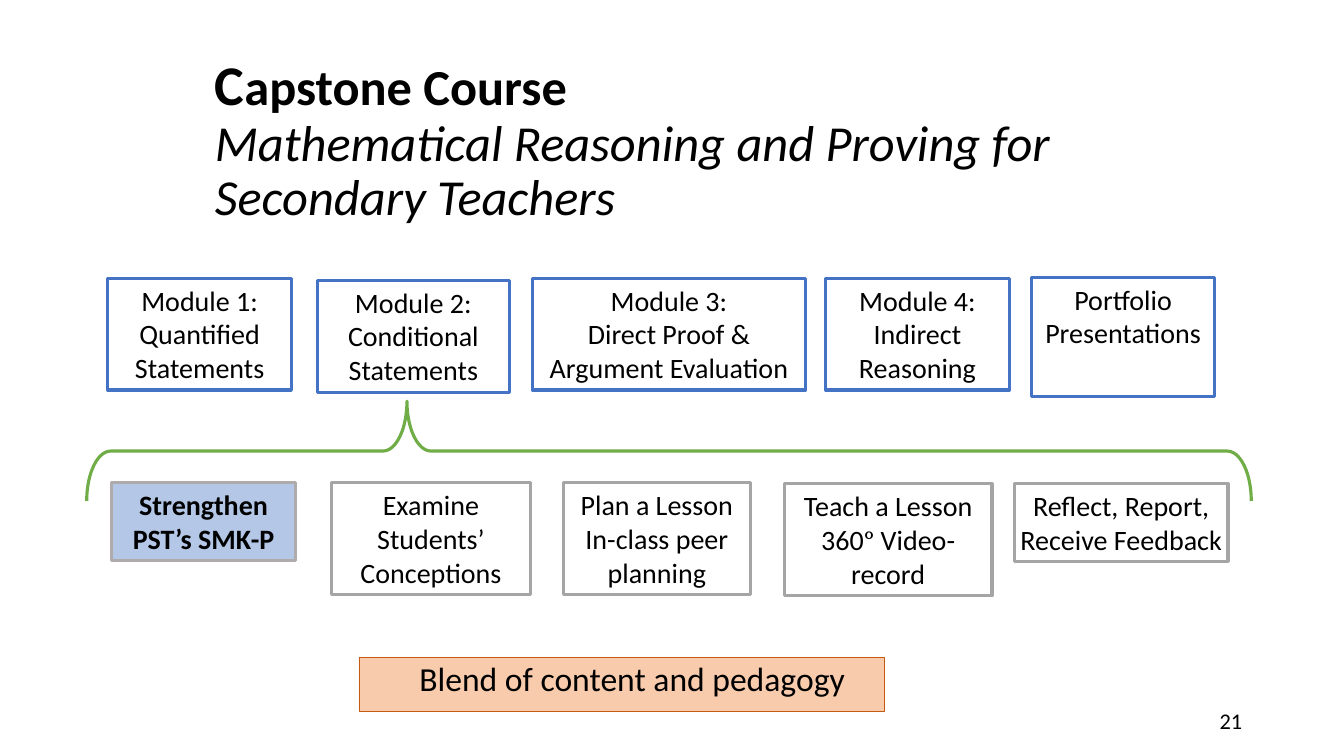
from dataclasses import dataclass

from pptx import Presentation
from pptx.dml.color import RGBColor
from pptx.enum.shapes import MSO_SHAPE as Shape
from pptx.enum.text import MSO_ANCHOR as Anchor, MSO_AUTO_SIZE as AutoSize, PP_ALIGN as Align
from pptx.util import Inches, Pt


@dataclass(frozen=True)
class Theme:
    ink: str = "000000"
    paper: str = "FFFFFF"
    module: str = "4472C4"
    activity: str = "A5A5A5"
    focus_fill: str = "B4C7E7"
    focus_line: str = "AFABAB"
    brace: str = "70AD47"
    banner_fill: str = "F8CBAD"
    banner_line: str = "C55A11"
    font: str = "Calibri"
    symbol_font: str = "Cambria"
    initial: int = 40
    title: int = 36
    banner: int = 24
    body: int = 20
    number: int = 16
    outline: float = 2.25
    hairline: float = 0.5


THEME = Theme()
WIDTH, HEIGHT = Inches(13.33), Inches(7.5)
INSET = Inches(0.1)

# Label, left, top, width, height in percent of the slide, side inset
MODULES = [
    ("Module 1: Quantified Statements", (8.03, 36.8, 13.65, 14.8), INSET),
    ("Module 2: Conditional Statements", (23.63, 37.07, 14.25, 14.8), INSET),
    ("Module 3:\nDirect Proof & Argument Evaluation", (39.61, 36.8, 20.33, 14.8), INSET),
    ("Module 4: Indirect Reasoning", (61.44, 36.8, 13.65, 14.8), INSET),
    ("Portfolio Presentations", (76.74, 36.67, 13.65, 15.73), 0),
]
ACTIVITIES = [
    ("Examine Students’ Conceptions", (24.68, 63.87, 14.78, 14.8)),
    ("Plan a Lesson\nIn-class peer planning", (41.94, 63.87, 13.88, 14.8)),
    ("Teach a Lesson 360° Video-record", (58.36, 64, 15.45, 14.8)),
    ("Reflect, Report, Receive Feedback", (75.47, 64, 15.9, 10.27)),
]


def place(left, top, width, height):
    """Turn percentages of the slide into lengths."""
    return (round(WIDTH * left / 100), round(HEIGHT * top / 100),
            round(WIDTH * width / 100), round(HEIGHT * height / 100))


def apply(target, formats):
    for name, value in formats.items():
        setattr(target, name, value)


def add_run(paragraph, text, size, **formats):
    run = paragraph.add_run()
    run.text = text
    apply(run.font, {"name": THEME.font, "size": Pt(size), **formats})
    run.font.color.rgb = RGBColor.from_string(THEME.ink)


def add_label(paragraph, text, size, bold=False):
    """Write a label, with any degree sign in the symbol font."""
    before, degree, after = text.partition("°")
    add_run(paragraph, before, size, bold=bold)
    if degree:
        add_run(paragraph, degree, size, bold=bold, name=THEME.symbol_font)
        add_run(paragraph, after, size, bold=bold)


def add_outline(slide, kind, area, line, weight, fill=None):
    shape = slide.shapes.add_shape(kind, *place(*area))
    shape.shadow.inherit = False
    if fill:
        shape.fill.solid()
        shape.fill.fore_color.rgb = RGBColor.from_string(fill)
    else:
        shape.fill.background()
    shape.line.color.rgb = RGBColor.from_string(line)
    shape.line.width = Pt(weight)
    return shape


def add_box(slide, text, area, line, fill=THEME.paper, inset=INSET, bold=False):
    frame = add_outline(slide, Shape.RECTANGLE, area, line, THEME.outline, fill).text_frame
    apply(frame, {"word_wrap": True, "vertical_anchor": Anchor.TOP,
                  "margin_left": inset, "margin_right": inset})
    for index, part in enumerate(text.split("\n")):
        paragraph = frame.add_paragraph() if index else frame.paragraphs[0]
        paragraph.alignment = Align.CENTER
        add_label(paragraph, part, THEME.body, bold)


def add_title(slide):
    title = slide.shapes.title
    apply(title, dict(zip(("left", "top", "width", "height"),
                          place(15.23, 7.6, 67.52, 29.33))))
    frame = title.text_frame
    apply(frame, {"word_wrap": True, "auto_size": AutoSize.NONE,
                  "vertical_anchor": Anchor.TOP, "margin_top": 0,
                  "margin_left": INSET, "margin_right": INSET})
    heading = frame.paragraphs[0]
    apply(heading, {"alignment": Align.LEFT, "line_spacing": 0.9})
    add_run(heading, "C", THEME.initial, bold=True)
    add_run(heading, "apstone Course", THEME.title, bold=True)
    heading.add_line_break()
    add_run(heading, "Mathematical Reasoning and Proving for Secondary Teachers",
            THEME.title, bold=False, italic=True)


def add_brace(slide):
    brace = add_outline(slide, Shape.LEFT_BRACE, (46.06, -17.33, 7.43, 154),
                        THEME.brace, THEME.outline)
    brace.rotation = 90
    brace.adjustments[0] = 0.24
    brace.adjustments[1] = 0.725


def add_banner(slide):
    frame = add_outline(slide, Shape.RECTANGLE, (26.71, 86.93, 39.08, 7.2),
                        THEME.banner_line, THEME.hairline, THEME.banner_fill).text_frame
    apply(frame, {"word_wrap": True, "vertical_anchor": Anchor.TOP,
                  "margin_left": Inches(0.6)})
    message = frame.paragraphs[0]
    apply(message, {"alignment": Align.LEFT, "line_spacing": 0.9})
    add_run(message, "Blend of content and pedagogy", THEME.banner)


def add_page_number(slide):
    frame = slide.shapes.add_textbox(*place(70.67, 92.67, 22.5, 5.33)).text_frame
    apply(frame, {"word_wrap": True, "vertical_anchor": Anchor.MIDDLE})
    frame.paragraphs[0].alignment = Align.RIGHT
    add_run(frame.paragraphs[0], "21", THEME.number)


def main():
    deck = Presentation()
    apply(deck, {"slide_width": WIDTH, "slide_height": HEIGHT})
    slide = deck.slides.add_slide(deck.slide_layouts[5])
    add_title(slide)
    add_page_number(slide)
    for label, area, inset in MODULES:
        add_box(slide, label, area, THEME.module, inset=inset)
    for label, area in ACTIVITIES:
        add_box(slide, label, area, THEME.activity, inset=0)
    add_box(slide, "Strengthen PST’s SMK-P", (8.33, 63.87, 13.65, 10.27),
            THEME.focus_line, fill=THEME.focus_fill, bold=True)
    add_brace(slide)
    add_banner(slide)
    deck.save("out.pptx")


if __name__ == "__main__":
    main()
